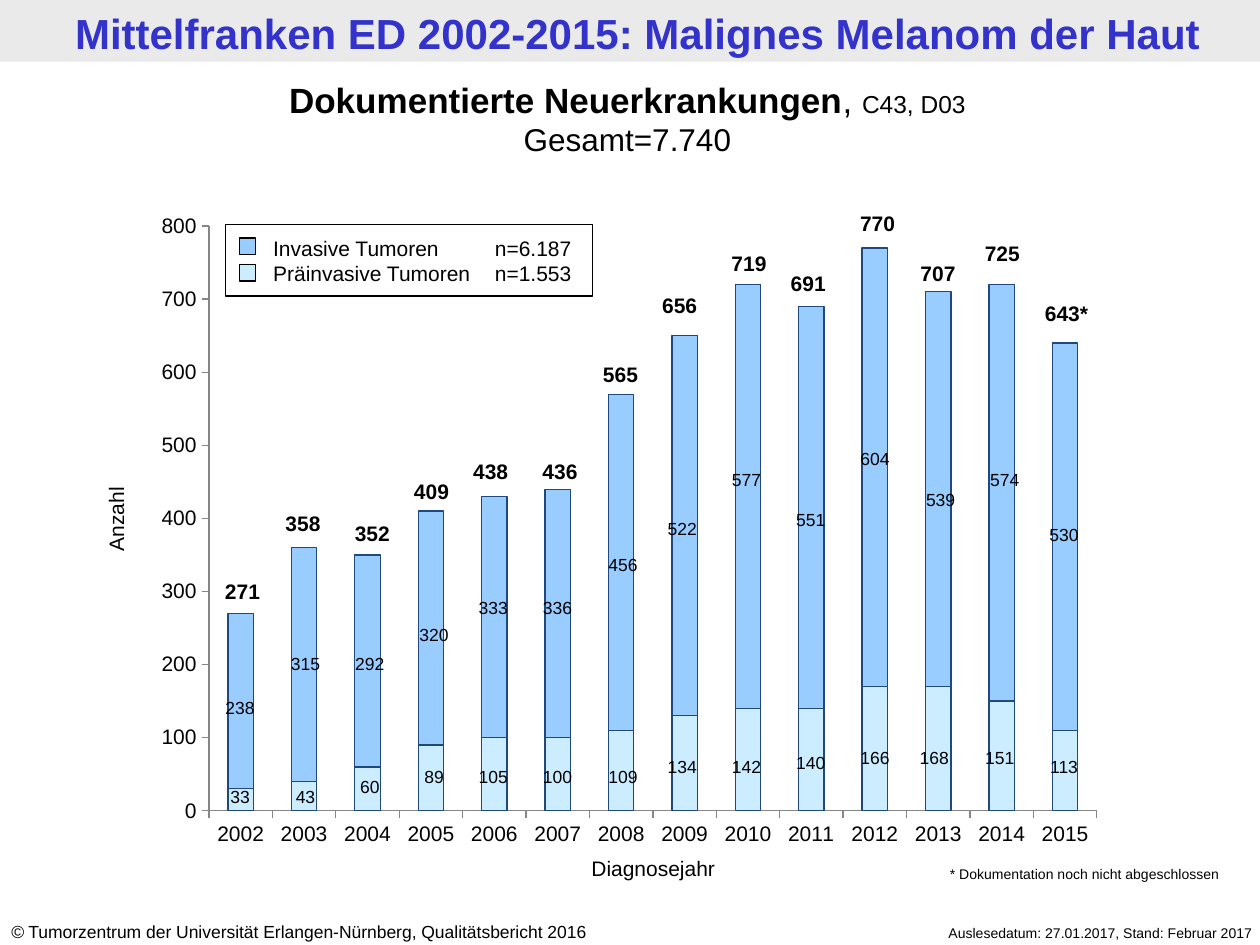
"""Build a slide on documented new melanoma cases by year of diagnosis."""
from lxml.etree import SubElement
from pptx import Presentation
from pptx.chart.data import CategoryChartData
from pptx.dml.color import RGBColor
from pptx.enum.chart import XL_CHART_TYPE, XL_TICK_MARK
from pptx.enum.shapes import MSO_SHAPE
from pptx.enum.text import MSO_AUTO_SIZE, PP_ALIGN
from pptx.oxml import parse_xml
from pptx.oxml.ns import nsdecls, qn
from pptx.util import Inches, Pt

COLORS = {
    "band": "EAEAEA",
    "title": "3333CC",
    "text": "000000",
    "invasive": "99CCFF",
    "preinvasive": "CCECFF",
    "bar line": "1F497D",
    "axis": "868686",
}
COLORS = {name: RGBColor.from_string(value) for name, value in COLORS.items()}
FONT = "Arial"
LEFT, CENTER, RIGHT = PP_ALIGN.LEFT, PP_ALIGN.CENTER, PP_ALIGN.RIGHT

deck = Presentation()
deck.slide_width, deck.slide_height = Inches(10), Inches(7.5)
COLUMN = deck.slide_width / 100
ROW = deck.slide_height / 75
page = deck.slides.add_slide(deck.slide_layouts[6])


def add_text(left, top, width, height, paragraphs, align=LEFT, color="text", wrap=True):
    box = page.shapes.add_textbox(
        round(left * COLUMN), round(top * ROW), round(width * COLUMN), round(height * ROW)
    )
    frame = box.text_frame
    frame.word_wrap = wrap
    frame.auto_size = MSO_AUTO_SIZE.SHAPE_TO_FIT_TEXT
    for index, spans in enumerate(paragraphs):
        para = frame.add_paragraph() if index else frame.paragraphs[0]
        para.alignment = align
        for text, size, style in spans:
            span = para.add_run()
            span.text = text
            span.font.name = FONT
            span.font.size = Pt(size)
            span.font.bold = style == "bold"
            span.font.italic = style == "italic"
            span.font.color.rgb = COLORS[color]
    return box


def add_rectangle(left, top, width, height, fill=None, line=None):
    box = page.shapes.add_shape(
        MSO_SHAPE.RECTANGLE,
        round(left * COLUMN), round(top * ROW), round(width * COLUMN), round(height * ROW),
    )
    box.shadow.inherit = False
    if fill:
        box.fill.solid()
        box.fill.fore_color.rgb = COLORS[fill]
    else:
        box.fill.background()
    if line:
        box.line.color.rgb = COLORS[line]
        box.line.width = Pt(0.75)
    else:
        box.line.fill.background()


add_rectangle(0, 0, 100, 4.9, fill="band")
title = "Mittelfranken ED 2002-2015: Malignes Melanom der Haut"
add_text(0.6, 0.1, 100, 4.9, [[(title, 24, "bold")]], CENTER, "title")
add_text(-0.1, 72.6, 52.4, 2.7, [[
    ("©", 10, "italic"),
    (" Tumorzentrum der Universität Erlangen-Nürnberg, Qualitätsbericht 2016", 10, ""),
]])
add_text(66.5, 72.9, 33.9, 2.4,
         [[("Auslesedatum: 27.01.2017, Stand: Februar 2017", 8, "")]], RIGHT)

YEARS = [
    ("2002", (33, 16.9, 61.9), (238, 16.9, 54.8), ("271", 16.1, 45.4)),
    ("2003", (43, 22.1, 61.9), (315, 22.1, 51.3), ("358", 20.9, 40.0)),
    ("2004", (60, 27.2, 61.1), (292, 27.2, 51.3), ("352", 26.4, 40.8)),
    ("2005", (89, 32.3, 60.3), (320, 32.3, 49.0), ("409", 31.1, 37.5)),
    ("2006", (105, 37.0, 60.3), (333, 37.0, 46.9), ("438", 35.8, 35.9)),
    ("2007", (100, 42.1, 60.3), (336, 42.1, 46.9), ("436", 41.3, 35.9)),
    ("2008", (109, 47.3, 60.3), (456, 47.3, 43.5), ("565", 46.1, 28.2)),
    ("2009", (134, 52.0, 59.5), (522, 52.0, 40.6), ("656", 50.8, 22.7)),
    ("2010", (142, 57.1, 59.5), (577, 57.1, 36.7), ("719", 56.3, 19.4)),
    ("2011", (140, 62.2, 59.2), (551, 62.2, 39.9), ("691", 61.0, 21.0)),
    ("2012", (166, 67.3, 58.8), (604, 67.3, 35.1), ("770", 66.5, 16.2)),
    ("2013", (168, 72.0, 58.8), (539, 72.5, 38.3), ("707", 71.3, 20.2)),
    ("2014", (151, 77.2, 58.8), (574, 77.6, 36.7), ("725", 76.4, 18.6)),
    ("2015", (113, 82.3, 59.5), (530, 82.3, 41.1), ("643*", 81.5, 23.4)),
]

data = CategoryChartData()
data.categories = [year[0] for year in YEARS]
data.add_series("Präinvasive Tumoren", [round(year[1][0], -1) for year in YEARS])
data.add_series("Invasive Tumoren", [round(year[2][0], -1) for year in YEARS])
chart = page.shapes.add_chart(
    XL_CHART_TYPE.COLUMN_STACKED,
    round(11.5 * COLUMN), round(16.4 * ROW), round(77.1 * COLUMN), round(51.4 * ROW), data,
).chart
chart.has_title = False
chart.has_legend = False
chart.font.name = FONT
chart.font.size = Pt(12)
chart.font.color.rgb = COLORS["text"]

plot = chart.plots[0]
plot.gap_width = 150
plot.overlap = 100
plot.vary_by_categories = False
for series, fill in zip(plot.series, ("preinvasive", "invasive")):
    series.format.fill.solid()
    series.format.fill.fore_color.rgb = COLORS[fill]
    series.format.line.color.rgb = COLORS["bar line"]
    series.format.line.width = Pt(0.75)

for axis in (chart.category_axis, chart.value_axis):
    axis.has_major_gridlines = False
    axis.major_tick_mark = XL_TICK_MARK.OUTSIDE
    axis.minor_tick_mark = XL_TICK_MARK.NONE
    axis.format.line.color.rgb = COLORS["axis"]
chart.value_axis.minimum_scale = 0
chart.value_axis.maximum_scale = 800
chart.value_axis.major_unit = 100

plot_area = chart.element.find(".//" + qn("c:plotArea"))
for old_layout in plot_area.findall(qn("c:layout")):
    plot_area.remove(old_layout)
plot_area.insert(0, parse_xml(
    f'<c:layout {nsdecls("c")}><c:manualLayout><c:layoutTarget val="inner"/>'
    '<c:xMode val="edge"/><c:yMode val="edge"/><c:x val="0.066"/><c:y val="0.03"/>'
    '<c:w val="0.914"/><c:h val="0.903"/></c:manualLayout></c:layout>'
))

add_text(-0.4, 5.7, 100.4, 7.4, [
    [("Dokumentierte Neuerkrankungen", 20, "bold"), (", ", 20, ""), ("C43, D03", 14, "")],
    [("Gesamt=7.740", 18, "")],
], CENTER)
add_text(40.6, 67.4, 22.5, 3, [[("Diagnosejahr", 12, "")]], CENTER)
add_text(3.1, 39.7, 12.2, 3, [[("Anzahl", 12, "")]], CENTER).rotation = 270

legend = add_text(20.7, 18.2, 26.4, 5, [
    [("Invasive Tumoren\tn=6.187", 12, "")],
    [("Präinvasive Tumoren\tn=1.553", 12, "")],
])
for para in legend.text_frame.paragraphs:
    tabs = SubElement(para._p.get_or_add_pPr(), qn("a:tabLst"))
    SubElement(tabs, qn("a:tab"), pos=str(Inches(1.76)), algn="l")
add_rectangle(17.9, 17.8, 29.1, 5.7, line="text")
for row, fill in enumerate(("invasive", "preinvasive")):
    add_rectangle(19, 18.9 + 2.1 * row, 1.3, 1.3, fill, "text")

for year, preinvasive, invasive, total in YEARS:
    label, left, top = total
    add_text(left, top, 6.3, 3, [[(label, 12, "bold")]], CENTER, wrap=False)
    for count, left, top in (invasive, preinvasive):
        add_text(left, top, 4.3, 2.7, [[(str(count), 10, "")]], CENTER, wrap=False)

add_text(74.4, 68.2, 24.8, 2.4, [[("* Dokumentation noch nicht abgeschlossen", 8, "")]])

deck.save("out.pptx")
